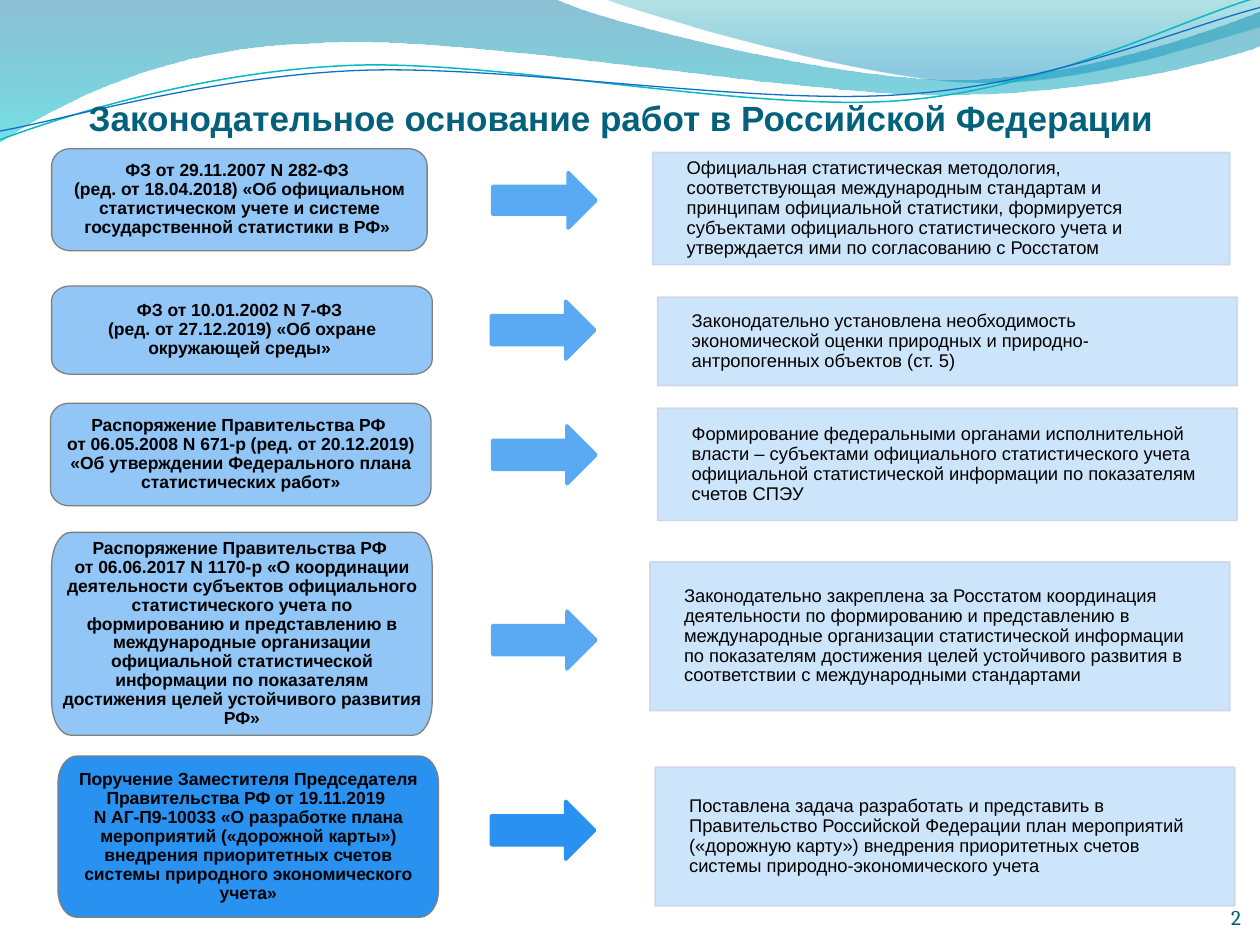
from lxml.etree import SubElement
from pptx import Presentation
from pptx.dml.color import RGBColor
from pptx.enum.shapes import MSO_SHAPE
from pptx.enum.text import MSO_ANCHOR, MSO_AUTO_SIZE, PP_ALIGN
from pptx.oxml.ns import qn
from pptx.util import Inches, Pt

CELL = Inches(0.1)  # the slide is a grid of 100 columns by 75 rows
COLUMNS, ROWS = 100, 75
ARROW_WIDTH = 8.2

COLORS = {
    "title": "04617B", "number": "045D75", "text": "000000",
    "law": "91C6F7", "order": "2991EF", "arrow": "59AAF2",
    "law_edge": "808080", "effect": "C8E3FB", "effect_edge": "CCD5EA",
    "wave_teal": "0AB8BF", "wave_blue": "0F6FC6",
}

TITLE_FONT = {"name": "Arial", "size": Pt(20), "bold": True}
LAW_FONT = {"name": "Arial", "size": Pt(10), "bold": True}
EFFECT_FONT = {"name": "Arial", "size": Pt(10.5), "bold": False}
NUMBER_FONT = {"name": "Cambria", "size": Pt(12), "bold": False}

# Start point, then segments: one point is a line, three points are a curve.
BANDS = [
    {"start": (0, 0),
     "segments": [[(44, -0.1)],
                  [(47.6, 1.7), (66.4, 6.3), (75.8, 6.3)],
                  [(85.3, 6.3), (95.8, 2.6), (100, 0.9)],
                  [(100.1, 3.6)],
                  [(98.3, 4.4), (87, 7.6), (74.6, 7.5)],
                  [(62.2, 7.5), (38.2, 2.8), (25.7, 3.4)],
                  [(12.9, 3.6), (4.6, 8.3), (-0.1, 11.3)],
                  [(0, 0)]],
     "stops": [(0, "0074A1", 45), (1, "00C6CF", 55)]},
    {"start": (47.9, -0.1),
     "segments": [[(50.9, 1.1), (68.2, 6.2), (76.9, 6.5)],
                  [(85.6, 6.9), (96.1, 3.2), (100, 2.1)],
                  [(100, 0)],
                  [(47.9, -0.1)]],
     "stops": [(0, "00A1A9", 30), (0.8, "008BBF", 45)]},
]
WAVES = [
    {"start": (0, 11.1),
     "segments": [[(4.8, 9.3), (15.8, 5.7), (27.7, 5.2)],
                  [(39.5, 4.7), (59.3, 8.9), (71.3, 8)],
                  [(83.3, 7.1), (93.8, 1.5), (99.8, -0.2)]],
     "color": "wave_teal", "width": 0.85},
    {"start": (0, 10.4),
     "segments": [[(4.7, 9.6), (16.4, 6.1), (28.3, 5.6)],
                  [(40.3, 5.1), (59.7, 8.4), (71.7, 7.5)],
                  [(83.6, 6.7), (94.1, 2.1), (100, 0.6)]],
     "color": "wave_blue", "width": 0.75},
]

# Each row: law text and box, arrow box, effect text and box, law and arrow colours.
LAWS = [
    ("ФЗ от 29.11.2007 N 282-ФЗ \n(ред. от 18.04.2018) «Об официальном статистическом учете "
     "и системе государственной статистики в РФ» ", (4.1, 11.8, 29.8, 8.1),
     (39.1, 13.7, ARROW_WIDTH, 4.4),
     "Официальная статистическая методология, соответствующая международным стандартам и "
     "принципам официальной статистики, формируется субъектами официального статистического "
     "учета и утверждается ими по согласованию с Росстатом", (51.8, 12.1, 45.8, 8.9),
     "law", "arrow"),
    ("ФЗ от 10.01.2002 N 7-ФЗ \n(ред. от 27.12.2019) «Об охране окружающей среды» ",
     (4.1, 22.7, 30.2, 7), (39, 23.9, ARROW_WIDTH, 4.6),
     "Законодательно установлена необходимость экономической оценки природных и "
     "природно-антропогенных объектов (ст. 5)", (52.2, 23.6, 46, 7), "law", "arrow"),
    ("Распоряжение Правительства РФ \nот 06.05.2008 N 671-р (ред. от 20.12.2019) "
     "«Об утверждении Федерального плана статистических работ»", (4, 32, 30.2, 8.15),
     (39.1, 33.8, ARROW_WIDTH, 4.6),
     "Формирование федеральными органами исполнительной власти – субъектами официального "
     "статистического учета официальной статистической информации по показателям счетов СПЭУ",
     (52.2, 32.4, 46, 8.9), "law", "arrow"),
    ("Распоряжение Правительства РФ \nот 06.06.2017 N 1170-р «О координации деятельности "
     "субъектов официального статистического учета по формированию и представлению в "
     "международные организации официальной статистической информации по показателям "
     "достижения целей устойчивого развития РФ»", (4.1, 42.25, 30.2, 16.1),
     (39.1, 48.5, ARROW_WIDTH, 4.6),
     "Законодательно закреплена за Росстатом координация деятельности по формированию и "
     "представлению в международные организации статистической информации по показателям "
     "достижения целей устойчивого развития в соответствии с международными стандартами",
     (51.6, 44.6, 46, 11.8), "law", "arrow"),
    ("Поручение Заместителя Председателя Правительства РФ от 19.11.2019 \nN АГ-П9-10033 "
     "«О разработке плана мероприятий («дорожной карты») внедрения приоритетных счетов "
     "системы природного экономического учета»", (4.6, 60, 30.2, 12.8),
     (39, 63.6, ARROW_WIDTH, 4.6),
     "Поставлена задача разработать и представить в Правительство Российской Федерации план "
     "мероприятий («дорожную карту») внедрения приоритетных счетов системы "
     "природно-экономического учета", (52, 60.9, 46, 11), "order", "order"),
]


def grid(*cells):
    return [round(cell * CELL) for cell in cells]


def apply(target, values):
    for attribute, value in values.items():
        setattr(target, attribute, value)


def write(shape, text, font, color, align, anchor, insets, spacing=1.0):
    """Insets are left, top, right, bottom in grid cells."""
    frame = shape.text_frame
    sides = ("margin_left", "margin_top", "margin_right", "margin_bottom")
    apply(frame, dict(zip(sides, grid(*insets))))
    apply(frame, {"word_wrap": True, "auto_size": MSO_AUTO_SIZE.NONE,
                  "vertical_anchor": anchor})
    paragraph = frame.paragraphs[0]
    paragraph.text = text.replace("\n", "\v")
    apply(paragraph, {"alignment": align, "line_spacing": spacing})
    for run in paragraph.runs:
        apply(run.font, font)
        run.font.color.rgb = RGBColor.from_string(COLORS[color])


def set_opacity(color_element, percent):
    SubElement(color_element, qn("a:alpha")).set("val", str(percent * 1000))


def paint(shape, fill, edge, edge_width):
    shape.shadow.inherit = False
    shape.fill.solid()
    shape.fill.fore_color.rgb = RGBColor.from_string(COLORS[fill])
    shape.line.color.rgb = RGBColor.from_string(COLORS[edge])
    shape.line.width = Pt(edge_width)


def add_block(slide, preset, box, fill, edge, edge_width):
    block = slide.shapes.add_shape(preset, *grid(*box))
    paint(block, fill, edge, edge_width)
    return block


def add_outline(slide, start, segments, close):
    """Draws lines through all points, then joins each group of three into a curve."""
    points = [grid(*point) for segment in segments for point in segment]
    builder = slide.shapes.build_freeform(*grid(*start), scale=1.0)
    builder.add_line_segments(points, close=close)
    outline = builder.convert_to_shape()
    outline.shadow.inherit = False
    lines = iter(list(outline._element.spPr.iter(qn("a:lnTo"))))
    for segment in segments:
        first, *others = [next(lines) for _ in segment]
        if others:
            first.tag = qn("a:cubicBezTo")
        for other in others:
            first.append(other[0])
            other.getparent().remove(other)
    return outline


def add_law(slide, text, box, fill):
    """A box whose corners are a twentieth of its width and a sixth of its height."""
    left, top, width, height = box
    right, bottom = left + width, top + height
    across, down = width / 20, height / 6
    near_x, near_y = across * 0.45, down * 0.45
    segments = [
        [(left, top + near_y), (left + near_x, top), (left + across, top)],
        [(right - across, top)],
        [(right - near_x, top), (right, top + near_y), (right, top + down)],
        [(right, bottom - down)],
        [(right, bottom - near_y), (right - near_x, bottom), (right - across, bottom)],
        [(left + across, bottom)],
        [(left + near_x, bottom), (left, bottom - near_y), (left, bottom - down)],
        [(left, top + down)],
    ]
    law = add_outline(slide, (left, top + down), segments, True)
    paint(law, fill, "law_edge", 0.75)
    write(law, text, LAW_FONT, "text", PP_ALIGN.CENTER, MSO_ANCHOR.MIDDLE,
          (0.85, 0.7, 0.85, 0.7), 0.9)


def add_effect(slide, text, box):
    effect = add_block(slide, MSO_SHAPE.RECTANGLE, box, "effect", "effect_edge", 1)
    for color_element in effect._element.spPr.iter(qn("a:srgbClr")):
        set_opacity(color_element, 90)
    write(effect, text, EFFECT_FONT, "text", PP_ALIGN.LEFT, MSO_ANCHOR.MIDDLE,
          (2.7, 1.7, 3.1, 1.7), 0.9)


def add_band(slide, start, segments, stops):
    band = add_outline(slide, start, segments, True)
    band.line.fill.background()
    band.fill.gradient()
    band.fill.gradient_angle = 270
    for stop, (position, color, _) in zip(band.fill.gradient_stops, stops):
        stop.position = position
        stop.color.rgb = RGBColor.from_string(color)
    for element, (_, _, opacity) in zip(band._element.spPr.iter(qn("a:srgbClr")), stops):
        set_opacity(element, opacity)


def add_wave(slide, start, segments, color, width):
    wave = add_outline(slide, start, segments, False)
    wave.fill.background()
    wave.line.color.rgb = RGBColor.from_string(COLORS[color])
    wave.line.width = Pt(width)


def place_title(slide, text):
    title = slide.shapes.title
    slide.shapes._spTree.append(title._element)  # in front of the waves
    apply(title, dict(zip(("left", "top", "width", "height"), grid(4.3, 6.8, 90, 6.2))))
    write(title, text, TITLE_FONT, "title", PP_ALIGN.CENTER, MSO_ANCHOR.BOTTOM, (0, 0.5, 0, 2))


def main():
    presentation = Presentation()
    apply(presentation, dict(zip(("slide_width", "slide_height"), grid(COLUMNS, ROWS))))
    slide = presentation.slides.add_slide(presentation.slide_layouts[5])
    for band in BANDS:
        add_band(slide, **band)
    for wave in WAVES:
        add_wave(slide, **wave)
    place_title(slide, "Законодательное основание работ в Российской Федерации")
    for law, law_box, arrow_box, effect, effect_box, law_color, arrow_color in LAWS:
        add_effect(slide, effect, effect_box)
        add_law(slide, law, law_box, law_color)
        add_block(slide, MSO_SHAPE.RIGHT_ARROW, arrow_box, arrow_color, arrow_color, 2)
    number = slide.shapes.add_textbox(*grid(90.2, 69.8, 8.3, 4))
    write(number, "2", NUMBER_FONT, "number", PP_ALIGN.RIGHT, MSO_ANCHOR.BOTTOM, (0, 0, 0, 0))
    presentation.save("out.pptx")


if __name__ == "__main__":
    main()
